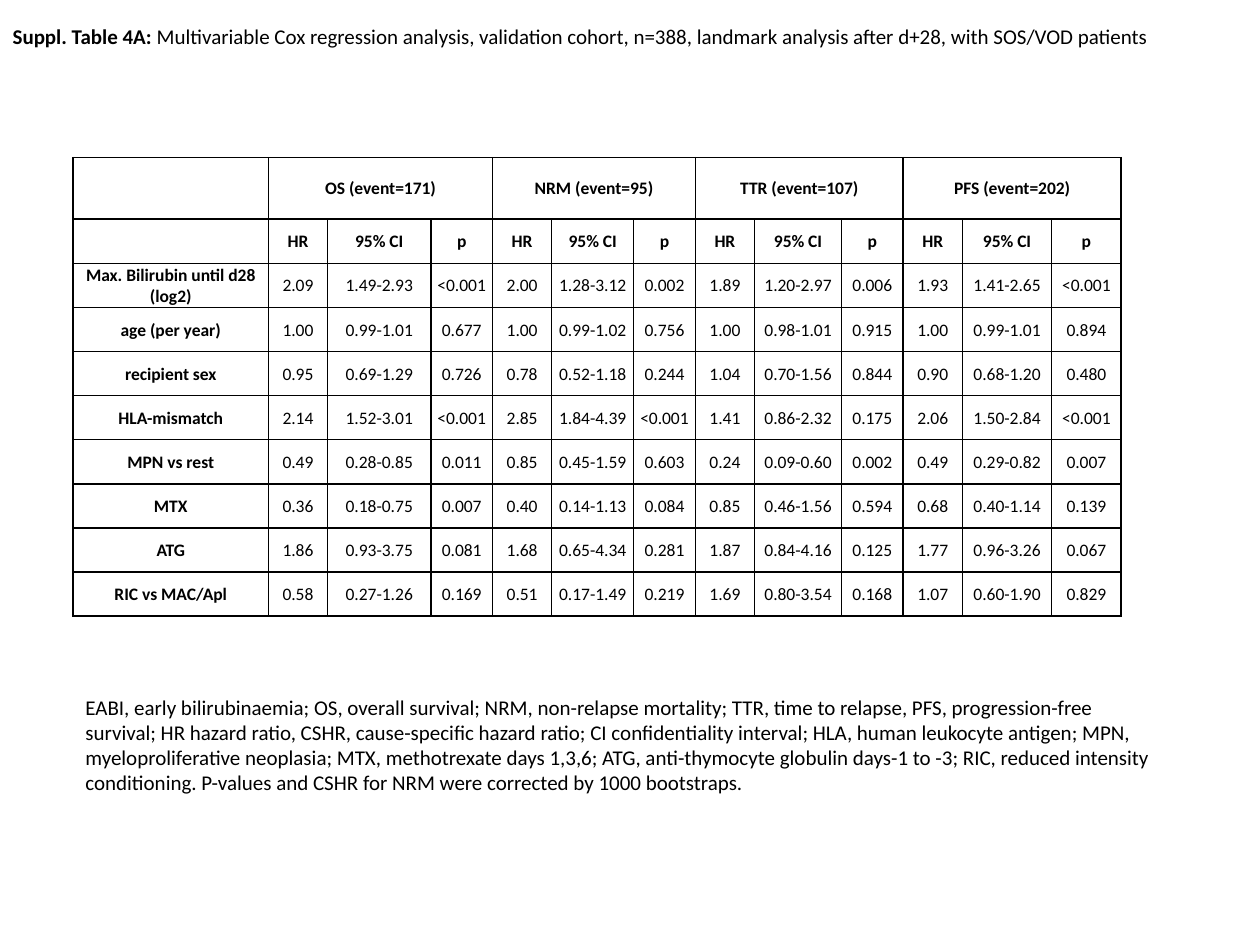
from dataclasses import dataclass

import pptx
import pptx.dml.color
import pptx.enum.shapes
import pptx.enum.text
import pptx.oxml
import pptx.oxml.ns
import pptx.util
from pptx.util import Inches

BLACK = pptx.dml.color.RGBColor(0x00, 0x00, 0x00)
WHITE = pptx.dml.color.RGBColor(0xFF, 0xFF, 0xFF)
FONT = "Calibri"
ALIGN = pptx.enum.text.PP_ALIGN
ANCHOR = pptx.enum.text.MSO_ANCHOR


@dataclass
class Endpoint:
    name: str
    ci_width: float
    p_width: float


@dataclass
class Covariate:
    name: str
    values: str


ENDPOINTS = [
    Endpoint("OS (event=171)", 0.82, 0.49),
    Endpoint("NRM (event=95)", 0.65, 0.49),
    Endpoint("TTR (event=107)", 0.69, 0.49),
    Endpoint("PFS (event=202)", 0.71, 0.55),
]
MEASURES = ["HR", "95% CI", "p"]
COVARIATES = [
    Covariate("Max. Bilirubin until d28 (log2)",
              "2.09 1.49-2.93 <0.001 2.00 1.28-3.12 0.002 1.89 1.20-2.97 0.006 1.93 1.41-2.65 <0.001"),
    Covariate("age (per year)",
              "1.00 0.99-1.01 0.677 1.00 0.99-1.02 0.756 1.00 0.98-1.01 0.915 1.00 0.99-1.01 0.894"),
    Covariate("recipient sex",
              "0.95 0.69-1.29 0.726 0.78 0.52-1.18 0.244 1.04 0.70-1.56 0.844 0.90 0.68-1.20 0.480"),
    Covariate("HLA-mismatch",
              "2.14 1.52-3.01 <0.001 2.85 1.84-4.39 <0.001 1.41 0.86-2.32 0.175 2.06 1.50-2.84 <0.001"),
    Covariate("MPN vs rest",
              "0.49 0.28-0.85 0.011 0.85 0.45-1.59 0.603 0.24 0.09-0.60 0.002 0.49 0.29-0.82 0.007"),
    Covariate("MTX",
              "0.36 0.18-0.75 0.007 0.40 0.14-1.13 0.084 0.85 0.46-1.56 0.594 0.68 0.40-1.14 0.139"),
    Covariate("ATG",
              "1.86 0.93-3.75 0.081 1.68 0.65-4.34 0.281 1.87 0.84-4.16 0.125 1.77 0.96-3.26 0.067"),
    Covariate("RIC vs MAC/Apl",
              "0.58 0.27-1.26 0.169 0.51 0.17-1.49 0.219 1.69 0.80-3.54 0.168 1.07 0.60-1.90 0.829"),
]
FOOTNOTE = (
    "EABI, early bilirubinaemia; OS, overall survival; NRM, non-relapse mortality; "
    "TTR, time to relapse, PFS, progression-free survival; HR hazard ratio, CSHR, "
    "cause-specific hazard ratio; CI confidentiality interval; HLA, human leukocyte antigen; "
    "MPN, myeloproliferative neoplasia; MTX, methotrexate days 1,3,6; ATG, anti-thymocyte "
    "globulin days-1 to -3; RIC, reduced intensity conditioning. P-values and CSHR for NRM "
    "were corrected by 1000 bootstraps."
)


def add_run(p, text: str, size: float, bold: bool = False) -> None:
    r = p.add_run()
    r.text = text
    r.font.name = FONT
    r.font.size = pptx.util.Pt(size)
    r.font.bold = bold
    r.font.color.rgb = BLACK


def format_cell(cell) -> None:
    cell.vertical_anchor = ANCHOR.MIDDLE
    cell.margin_left = cell.margin_right = cell.margin_top = Inches(0.01)
    cell.margin_bottom = Inches(0)
    tc_pr = cell._tc.get_or_add_tcPr()
    for side in ("lnL", "lnR", "lnT", "lnB"):
        tc_pr.append(pptx.oxml.parse_xml(
            f'<a:{side} {pptx.oxml.ns.nsdecls("a")} w="12700"><a:solidFill>'
            f'<a:srgbClr val="{BLACK}"/></a:solidFill></a:{side}>'))
    cell.fill.background()


def fill_cell(cell, text: str, bold: bool) -> None:
    p = cell.text_frame.paragraphs[0]
    p.alignment = ALIGN.CENTER
    add_run(p, text, 10, bold)


def add_title(s) -> None:
    sp = s.shapes.title
    sp.left, sp.top, sp.width, sp.height = Inches(0), Inches(0.14), Inches(9.5), Inches(0.5)
    tf = sp.text_frame
    tf.word_wrap = True
    tf.auto_size = pptx.enum.text.MSO_AUTO_SIZE.NONE
    tf.vertical_anchor = ANCHOR.TOP
    p = tf.paragraphs[0]
    p.alignment = ALIGN.JUSTIFY
    add_run(p, "Suppl. Table 4A: ", 12, True)
    add_run(p, "Multivariable Cox regression analysis, validation cohort, n=388, "
               "landmark analysis after d+28, with SOS/VOD patients", 12)


def add_footnote(s) -> None:
    sp = s.shapes.add_shape(pptx.enum.shapes.MSO_SHAPE.RECTANGLE,
                            Inches(0.58), Inches(5.46), Inches(8.67), Inches(0.91))
    sp.shadow.inherit = False
    sp.fill.solid()
    sp.fill.fore_color.rgb = WHITE
    sp.line.fill.background()
    tf = sp.text_frame
    tf.word_wrap = True
    tf.vertical_anchor = ANCHOR.TOP
    p = tf.paragraphs[0]
    p.alignment = ALIGN.LEFT
    add_run(p, FOOTNOTE, 12)


def add_results(s) -> None:
    widths = [1.55]
    for e in ENDPOINTS:
        widths += [0.47, e.ci_width, e.p_width]
    heights = [0.49] + [0.35] * (len(COVARIATES) + 1)
    table = s.shapes.add_table(len(heights), len(widths), Inches(0.58), Inches(1.25),
                               Inches(sum(widths)), Inches(sum(heights))).table
    table.first_row = False
    table.horz_banding = False
    for column, width in zip(table.columns, widths):
        column.width = Inches(width)
    for row, height in zip(table.rows, heights):
        row.height = Inches(height)
    for cell in table.iter_cells():
        format_cell(cell)

    for i, e in enumerate(ENDPOINTS):
        first = 1 + i * len(MEASURES)
        table.cell(0, first).merge(table.cell(0, first + len(MEASURES) - 1))
        fill_cell(table.cell(0, first), e.name, True)
        for j, measure in enumerate(MEASURES):
            fill_cell(table.cell(1, first + j), measure, True)
    for i, covariate in enumerate(COVARIATES, 2):
        fill_cell(table.cell(i, 0), covariate.name, True)
        for j, value in enumerate(covariate.values.split(), 1):
            fill_cell(table.cell(i, j), value, False)


def main() -> None:
    prs = pptx.Presentation()
    prs.slide_width, prs.slide_height = Inches(10), Inches(7.5)
    s = prs.slides.add_slide(prs.slide_layouts[5])
    add_title(s)
    add_footnote(s)
    add_results(s)
    prs.save("out.pptx")


if __name__ == "__main__":
    main()
